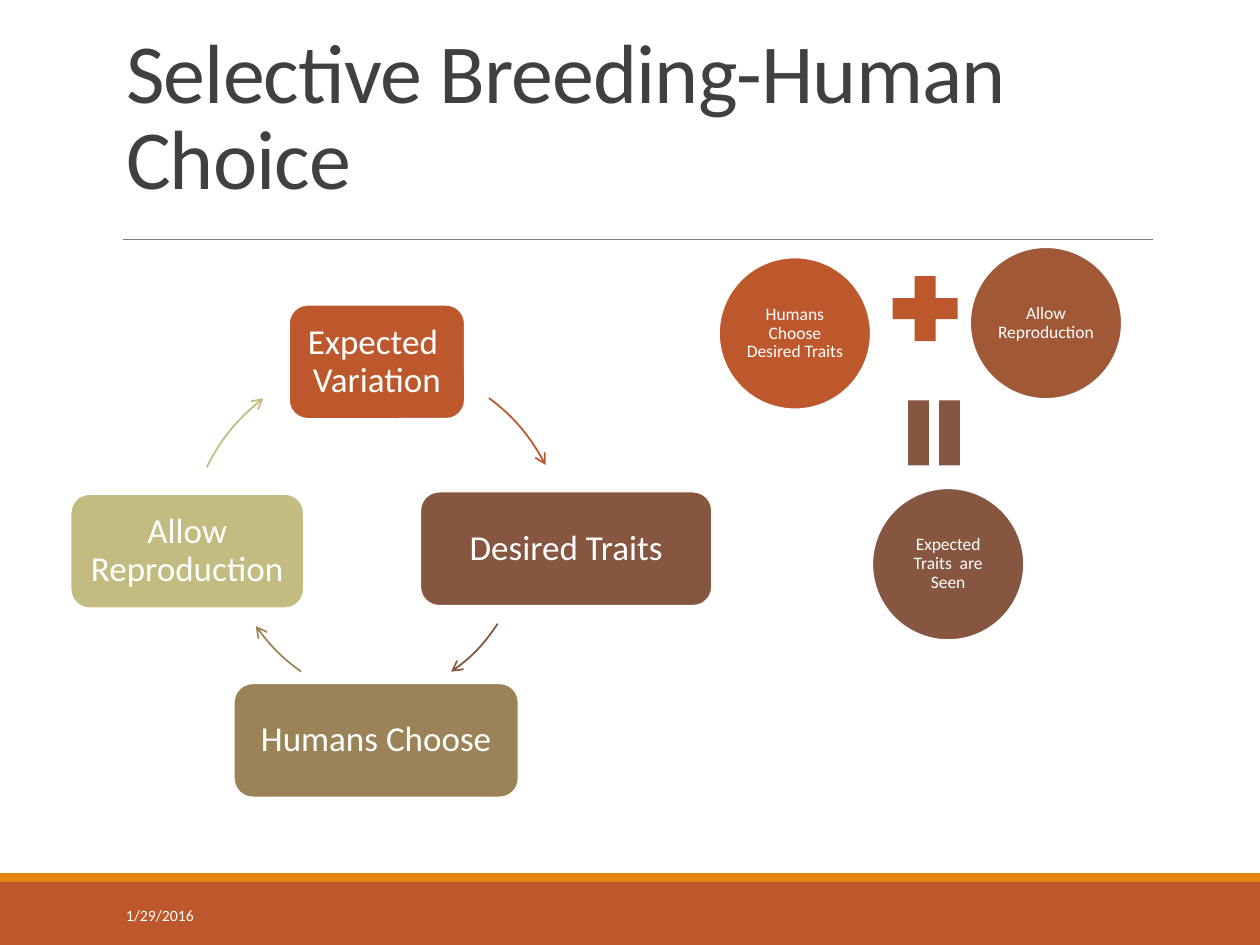
from lxml import etree
from pptx import Presentation
from pptx.dml.color import RGBColor
from pptx.enum.shapes import MSO_CONNECTOR, MSO_SHAPE
from pptx.enum.text import MSO_ANCHOR, MSO_AUTO_SIZE, PP_ALIGN
from pptx.oxml.ns import qn
from pptx.util import Pt

RECT, ROUNDED, OVAL = MSO_SHAPE.RECTANGLE, MSO_SHAPE.ROUNDED_RECTANGLE, MSO_SHAPE.OVAL
PLUS, EQUAL = MSO_SHAPE.MATH_PLUS, MSO_SHAPE.MATH_EQUAL
STRAIGHT = MSO_CONNECTOR.STRAIGHT
MIDDLE, BOTTOM = MSO_ANCHOR.MIDDLE, MSO_ANCHOR.BOTTOM
LEFT, CENTER = PP_ALIGN.LEFT, PP_ALIGN.CENTER
NO_FIT = MSO_AUTO_SIZE.NONE

THEME = {
    "font": "Calibri",
    "white": "FFFFFF", "ink": "404040", "rule": "808080",
    "rust": "BD582C", "orange": "E48312", "sienna": "A05837",
    "brown": "865640", "tan": "9B8357", "sage": "C2BC80",
    "title": 48, "step": 20, "term": 10, "date": 9,
}


def color(name):
    return RGBColor.from_string(THEME[name])


def write(shape, text, size, ink, align, spacing, anchor, inset=None):
    frame = shape.text_frame
    layout = {"word_wrap": True, "auto_size": NO_FIT, "vertical_anchor": anchor}
    if inset is not None:
        for side in ("left", "right", "top", "bottom"):
            layout["margin_" + side] = Pt(inset)
    for key, value in layout.items():
        setattr(frame, key, value)
    paragraph = frame.paragraphs[0]
    paragraph.alignment = align
    paragraph.line_spacing = spacing
    run = paragraph.add_run()
    run.text = text
    for key, value in {"name": THEME["font"], "size": Pt(THEME[size])}.items():
        setattr(run.font, key, value)
    run.font.color.rgb = color(ink)
    return run


deck = Presentation()
deck.slide_width, deck.slide_height = Pt(720), Pt(540)
slide = deck.slides.add_slide(deck.slide_layouts[5])
shapes = slide.shapes

for top, height, fill in [(504, 36, "rust"), (499, 5, "orange")]:
    band = shapes.add_shape(RECT, Pt(0), Pt(top), Pt(720), Pt(height))
    band.shadow.inherit = False
    band.fill.solid()
    band.fill.fore_color.rgb = color(fill)
    band.line.fill.background()

rule = shapes.add_connector(STRAIGHT, Pt(70.5), Pt(136.8), Pt(658.8), Pt(136.8))
rule.line.width = Pt(0.5)
rule.line.color.rgb = color("rule")
etree.SubElement(rule._element.spPr, qn("a:effectLst"))

title = shapes.title
for key, value in {"left": 64.8, "top": 12.3, "width": 594, "height": 109.4}.items():
    setattr(title, key, Pt(value))
heading = write(title, "Selective Breeding-Human Choice", "title", "ink", LEFT, 0.85, BOTTOM)
heading.font._element.set("spc", "-50")

bubbles = [
    (ROUNDED, 165, 174, 100.8, 65.5, "rust", "Expected  Variation", "step", 6),
    (ROUNDED, 240, 280.8, 167, 65.5, "brown", "Desired Traits", "step", 6),
    (ROUNDED, 133.5, 390.3, 163, 65.5, "tan", "Humans Choose", "step", 6),
    (ROUNDED, 40.2, 282.2, 133.6, 65.5, "sage", "Allow Reproduction", "step", 6),
    (OVAL, 410.7, 147, 87, 87, "rust", "Humans Choose Desired Traits", "term", 0.9),
    (OVAL, 554.2, 141.1, 87, 87, "sienna", "Allow Reproduction", "term", 0.9),
    (OVAL, 498.3, 278.9, 87, 87, "brown", "Expected Traits  are Seen", "term", 0.9),
]
for kind, left, top, width, height, fill, text, size, inset in bubbles:
    bubble = shapes.add_shape(kind, Pt(left), Pt(top), Pt(width), Pt(height))
    bubble.shadow.inherit = False
    bubble.fill.solid()
    bubble.fill.fore_color.rgb = color(fill)
    bubble.line.color.rgb = color("white")
    bubble.line.width = Pt(1.25)
    write(bubble, text, size, "white", CENTER, 0.9, MIDDLE, inset)

cycle_arrows = [
    ("rust", [(279.4, 227.5), (293, 237.6), (303.8, 250.6), (311.8, 265.7)]),
    ("brown", [(284.4, 356.4), (277.2, 367.2), (268.6, 376.6), (257.8, 383.8)]),
    ("tan", [(172.1, 383.8), (162, 376.6), (153.4, 367.9), (146.2, 357.8)]),
    ("sage", [(118.1, 267.1), (126, 251.3), (136.8, 238.3), (150.5, 227.5)]),
]
for stroke, points in cycle_arrows:
    start, *bend = [(Pt(x), Pt(y)) for x, y in points]
    builder = shapes.build_freeform(*start, scale=1.0)
    builder.add_line_segments(bend, close=False)
    arrow = builder.convert_to_shape()
    arrow.shadow.inherit = False
    arrow.fill.background()
    arrow.line.color.rgb = color(stroke)
    arrow.line.width = Pt(1)
    track = next(arrow._element.iter(qn("a:path")))
    segments = track.findall(qn("a:lnTo"))
    curve = etree.SubElement(track, qn("a:cubicBezTo"))
    for segment in segments:
        curve.append(segment[0])
        track.remove(segment)
    etree.SubElement(arrow.line._get_or_add_ln(), qn("a:tailEnd"), type="arrow")

for kind, left, top, fill, turn in [(PLUS, 503.5, 151.2, "rust", 0),
                                    (EQUAL, 508.5, 222.2, "brown", 90)]:
    sign = shapes.add_shape(kind, Pt(left), Pt(top), Pt(50.4), Pt(50.4))
    sign.shadow.inherit = False
    sign.rotation = turn
    sign.fill.solid()
    sign.fill.fore_color.rgb = color(fill)
    sign.line.fill.background()

date = shapes.add_textbox(Pt(64.8), Pt(508.4), Pt(146), Pt(28.8))
write(date, "1/29/2016", "date", "white", LEFT, 1.0, MIDDLE)

deck.save("out.pptx")
